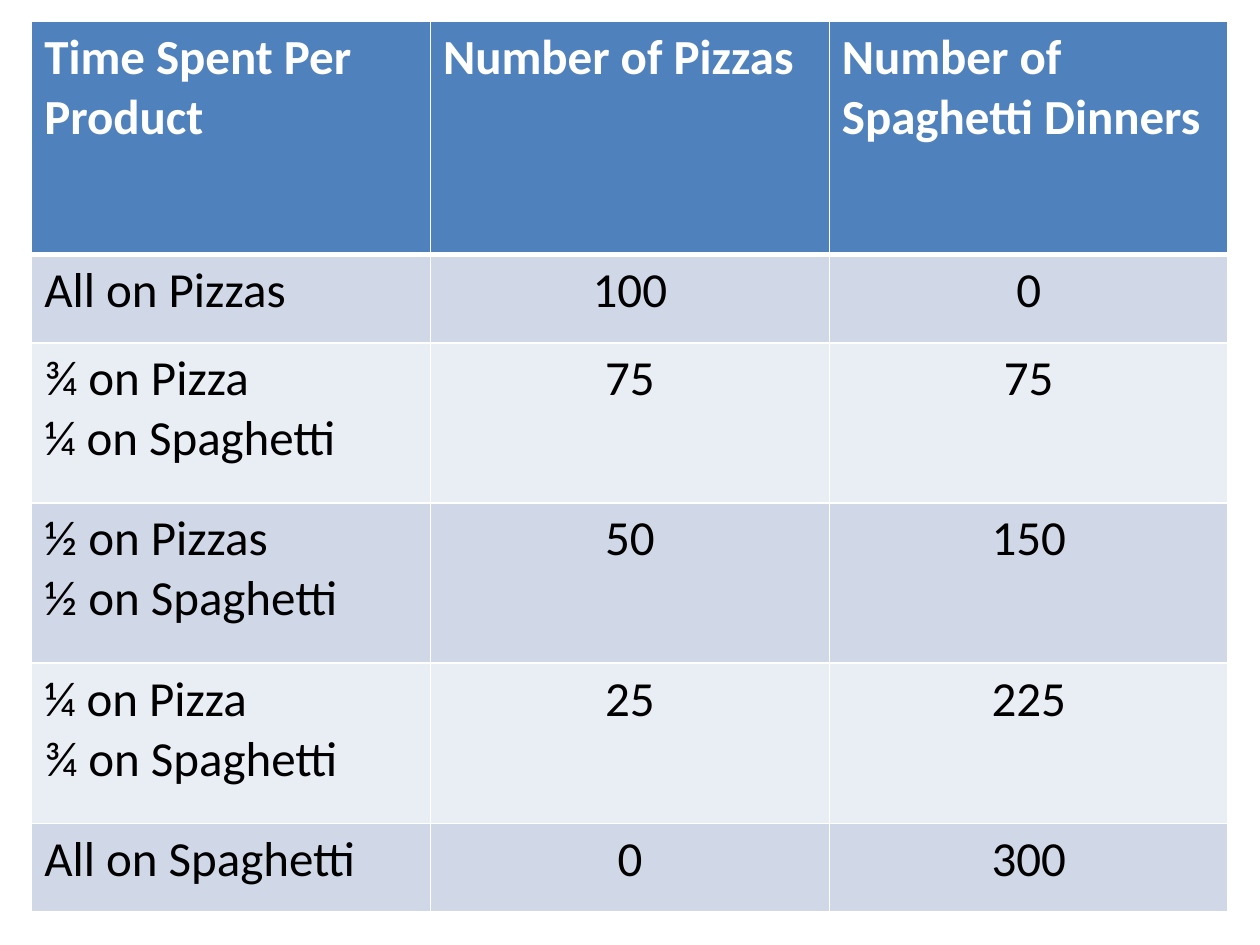
"""Build a slide with a table of pizza and spaghetti output by time spent."""
from dataclasses import dataclass

from lxml import etree
from pptx import Presentation
from pptx.dml.color import RGBColor
from pptx.enum.text import PP_ALIGN
from pptx.oxml.ns import qn
from pptx.slide import Slide
from pptx.table import _Cell
from pptx.util import Cm, Pt

LEFT, CENTER = PP_ALIGN.LEFT, PP_ALIGN.CENTER


@dataclass(frozen=True)
class Theme:
    font: str = "Calibri"
    size: int = 28
    head: str = "4F81BD"
    bands: tuple[str, str] = ("D0D8E8", "E9EDF4")
    light: str = "FFFFFF"
    dark: str = "000000"
    thin: int = 1
    thick: int = 3


@dataclass(frozen=True)
class Row:
    cells: tuple[str, str, str]
    height: float


THEME = Theme()
HEAD, SHORT, TALL = 4.7, 1.78, 3.23
WIDTH = 8.04
ROWS = (
    Row(("Time Spent Per Product", "Number of Pizzas", "Number of Spaghetti Dinners"), HEAD),
    Row(("All on Pizzas", "100", "0"), SHORT),
    Row(("¾ on Pizza\n¼ on Spaghetti", "75", "75"), TALL),
    Row(("½ on Pizzas\n½ on Spaghetti", "50", "150"), TALL),
    Row(("¼ on Pizza\n¾ on Spaghetti", "25", "225"), TALL),
    Row(("All on Spaghetti", "0", "300"), SHORT),
)


def add_edge(cell: _Cell, side: str, width: int) -> None:
    props = cell._tc.get_or_add_tcPr()
    line = etree.SubElement(props, qn(f"a:ln{side}"), w=str(Pt(width)))
    fill = etree.SubElement(line, qn("a:solidFill"))
    etree.SubElement(fill, qn("a:srgbClr"), val=THEME.light)


def style_cell(cell: _Cell, text: str, row: int, col: int) -> None:
    is_head = row == 0
    edges = {
        "L": THEME.thin,
        "R": THEME.thin,
        "T": THEME.thick if row == 1 else THEME.thin,
        "B": THEME.thick if is_head else THEME.thin,
    }
    for side, width in edges.items():
        add_edge(cell, side, width)
    color = THEME.head if is_head else THEME.bands[(row - 1) % 2]
    cell.fill.solid()
    cell.fill.fore_color.rgb = RGBColor.from_string(color)
    cell.text_frame.text = text
    for para in cell.text_frame.paragraphs:
        para.alignment = LEFT if is_head or col == 0 else CENTER
        for run in para.runs:
            font = run.font
            font.name, font.size, font.bold = THEME.font, Pt(THEME.size), is_head
            ink = THEME.light if is_head else THEME.dark
            font.color.rgb = RGBColor.from_string(ink)


def add_grid(slide: Slide, rows: tuple[Row, ...]) -> None:
    count = len(rows[0].cells)
    height = sum(row.height for row in rows)
    frame = slide.shapes.add_table(
        len(rows), count, Cm(0.64), Cm(0.43), Cm(WIDTH * count), Cm(height)
    )
    table = frame.table
    for column in table.columns:
        column.width = Cm(WIDTH)
    for i, row in enumerate(rows):
        table.rows[i].height = Cm(row.height)
        for j, text in enumerate(row.cells):
            style_cell(table.cell(i, j), text, i, j)


def main() -> None:
    deck = Presentation()
    deck.slide_width, deck.slide_height = Cm(25.4), Cm(19.05)
    slide = deck.slides.add_slide(deck.slide_layouts[6])
    add_grid(slide, ROWS)
    deck.save("out.pptx")


if __name__ == "__main__":
    main()
